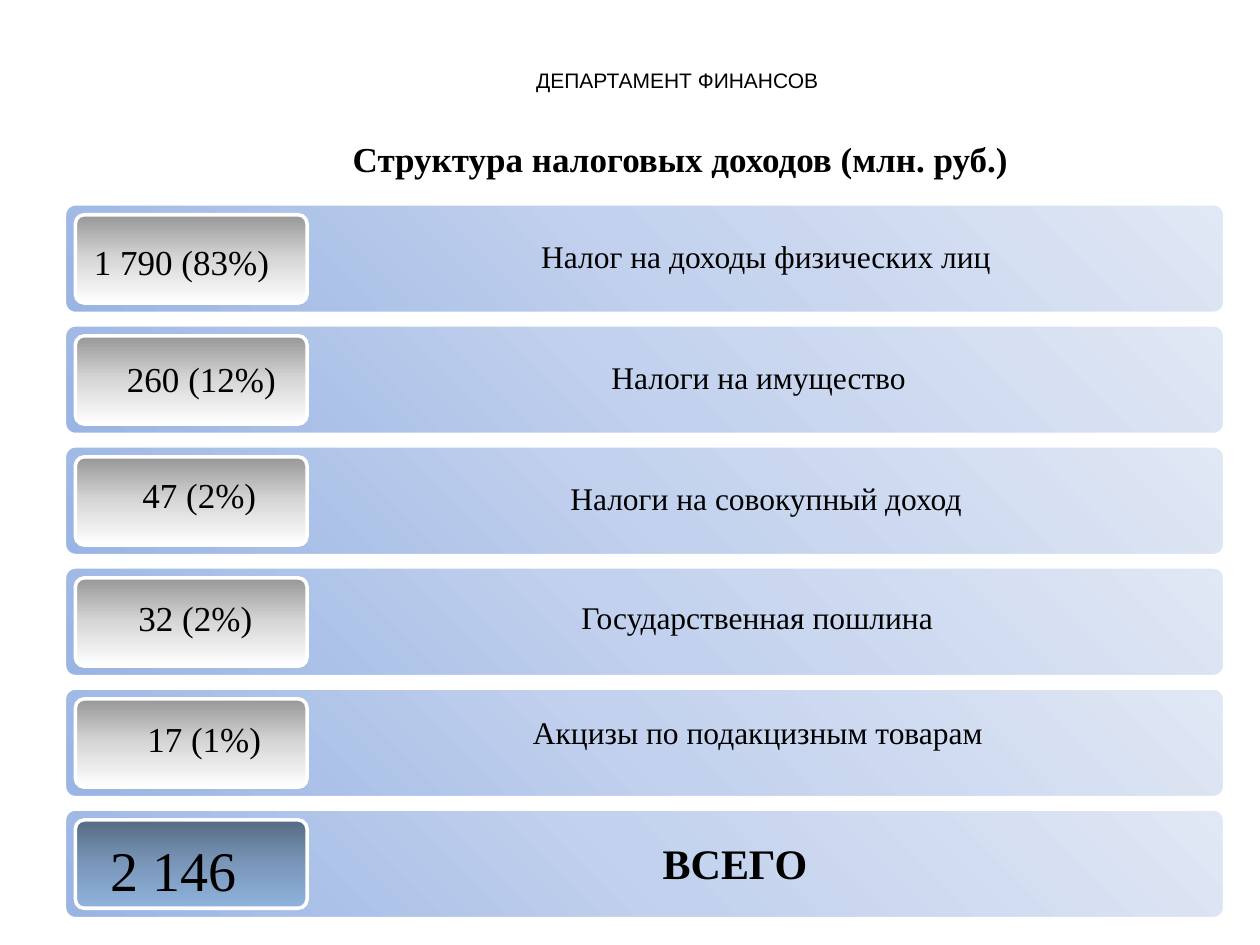
from typing import NamedTuple

from lxml import etree
from pptx import Presentation
from pptx import util as u
from pptx.dml.color import RGBColor
from pptx.enum import shapes, text
from pptx.oxml import ns

BLACK = RGBColor(0, 0, 0)
WHITE = RGBColor(255, 255, 255)
BAR_COLOURS = (
    RGBColor(0x9A, 0xB5, 0xE4),
    RGBColor(0xC2, 0xD1, 0xED),
    RGBColor(0xE1, 0xE8, 0xF5),
)
GREY_COLOURS = (
    RGBColor(0x97, 0x97, 0x97),
    RGBColor(0xD7, 0xD7, 0xD7),
    WHITE,
)
TOTAL_COLOURS = (
    RGBColor(0x56, 0x6A, 0x83),
    RGBColor(0x7A, 0x97, 0xBA),
    RGBColor(0x90, 0xB3, 0xDC),
)
SERIF = "Times New Roman"
LEFT = text.PP_ALIGN.LEFT
CENTER = text.PP_ALIGN.CENTER
ROW_TOP, ROW_PITCH, ROW_COUNT = 4.11, 2.44, 6
BAR_HEIGHT = 2.21


class Area(NamedTuple):
    left: float
    top: float
    width: float
    height: float


class Caption(NamedTuple):
    wording: str
    area: Area
    size: int
    align: text.PP_ALIGN = LEFT
    bold: bool = False
    wrap: bool = False
    middle: bool = False
    font: str = SERIF


def row_area(row: int, left: float, width: float) -> Area:
    return Area(left, ROW_TOP + row * ROW_PITCH, width, BAR_HEIGHT)


HEADINGS = (
    Caption("ДЕПАРТАМЕНТ ФИНАНСОВ", Area(2.25, 1.24, 22.81, 0.76), 12,
            CENTER, wrap=True, font="Arial"),
    Caption("Структура налоговых доходов (млн. руб.)",
            Area(6.86, 2.64, 17.09, 1.12), 20, bold=True, wrap=True),
)
VALUES = (
    Caption("1 790 (83%)", Area(1.63, 4.72, 4.06, 1.12), 20, CENTER),
    Caption("260 (12%)", Area(2.31, 7.09, 4.55, 1.12), 20, wrap=True),
    Caption("47 (2%)", Area(2.62, 9.42, 3.68, 1.12), 20, wrap=True),
    Caption("32 (2%)", Area(2.54, 11.91, 2.82, 1.12), 20),
    Caption("17 (1%)", Area(2.72, 14.33, 2.82, 1.12), 20),
    Caption("2 146", Area(1.98, 16.71, 3.07, 1.63), 32),
)
LABELS = (
    Caption("Налог на доходы физических лиц", row_area(0, 6.2, 18.49),
            18, CENTER, wrap=True, middle=True),
    Caption("Налоги на имущество", row_area(1, 6.05, 18.49),
            18, CENTER, wrap=True, middle=True),
    Caption("Налоги на совокупный доход", row_area(2, 6.2, 18.49),
            18, CENTER, wrap=True, middle=True),
    Caption("Государственная пошлина", Area(11.43, 11.94, 7.67, 1.02),
            18, CENTER),
    Caption("Акцизы по подакцизным товарам",
            Area(10.44, 14.25, 9.68, 1.02), 18, CENTER),
    Caption("ВСЕГО", Area(13.11, 16.76, 3.45, 1.27), 24, bold=True),
)


def lengths(area: Area) -> list[u.Length]:
    return [u.Cm(value) for value in area]


def fill_gradient(box, colours: tuple, radial: bool) -> None:
    box.fill.gradient()
    gradient = box.fill._xPr.find(ns.qn("a:gradFill"))
    for child in list(gradient):
        gradient.remove(child)
    stops = etree.SubElement(gradient, ns.qn("a:gsLst"))
    for position, colour in zip((0, 50000, 100000), colours):
        stop = etree.SubElement(stops, ns.qn("a:gs"), pos=str(position))
        etree.SubElement(stop, ns.qn("a:srgbClr"), val=str(colour))
    if radial:
        shade = etree.SubElement(gradient, ns.qn("a:path"), path="circle")
        etree.SubElement(shade, ns.qn("a:fillToRect"),
                         l="0", t="100000", r="100000", b="0")
    else:
        etree.SubElement(gradient, ns.qn("a:lin"), ang="5400000", scaled="0")


def draw_panel(page, area: Area, colours: tuple, radial: bool = False) -> None:
    box = page.shapes.add_shape(
        shapes.MSO_SHAPE.ROUNDED_RECTANGLE, *lengths(area))
    box.adjustments[0] = 0.1
    box.shadow.inherit = False
    fill_gradient(box, colours, radial)
    box.line.color.rgb = WHITE
    box.line.width = u.Pt(2)


def draw_caption(page, caption: Caption) -> None:
    frame = page.shapes.add_textbox(*lengths(caption.area)).text_frame
    frame.word_wrap = caption.wrap
    para = frame.paragraphs[0]
    para.alignment = caption.align
    if caption.middle:
        frame.vertical_anchor = text.MSO_ANCHOR.MIDDLE
        para.line_spacing = 0.9
    span = para.add_run()
    span.text = caption.wording
    span.font.color.rgb = BLACK
    formats = {"name": caption.font, "size": u.Pt(caption.size),
               "bold": caption.bold}
    for key, value in formats.items():
        setattr(span.font, key, value)


def main() -> None:
    deck = Presentation()
    deck.slide_width, deck.slide_height = u.Cm(25.4), u.Cm(19.05)
    page = deck.slides.add_slide(deck.slide_layouts[6])
    for row in range(ROW_COUNT):
        bar = row_area(row, 1.3, 23.39)
        draw_panel(page, bar, BAR_COLOURS, radial=True)
        colours = TOTAL_COLOURS if row == ROW_COUNT - 1 else GREY_COLOURS
        draw_panel(page, Area(1.52, bar.top + 0.22, 4.67, 1.78), colours)
    for caption in HEADINGS + VALUES + LABELS:
        draw_caption(page, caption)
    deck.save("out.pptx")


if __name__ == "__main__":
    main()
